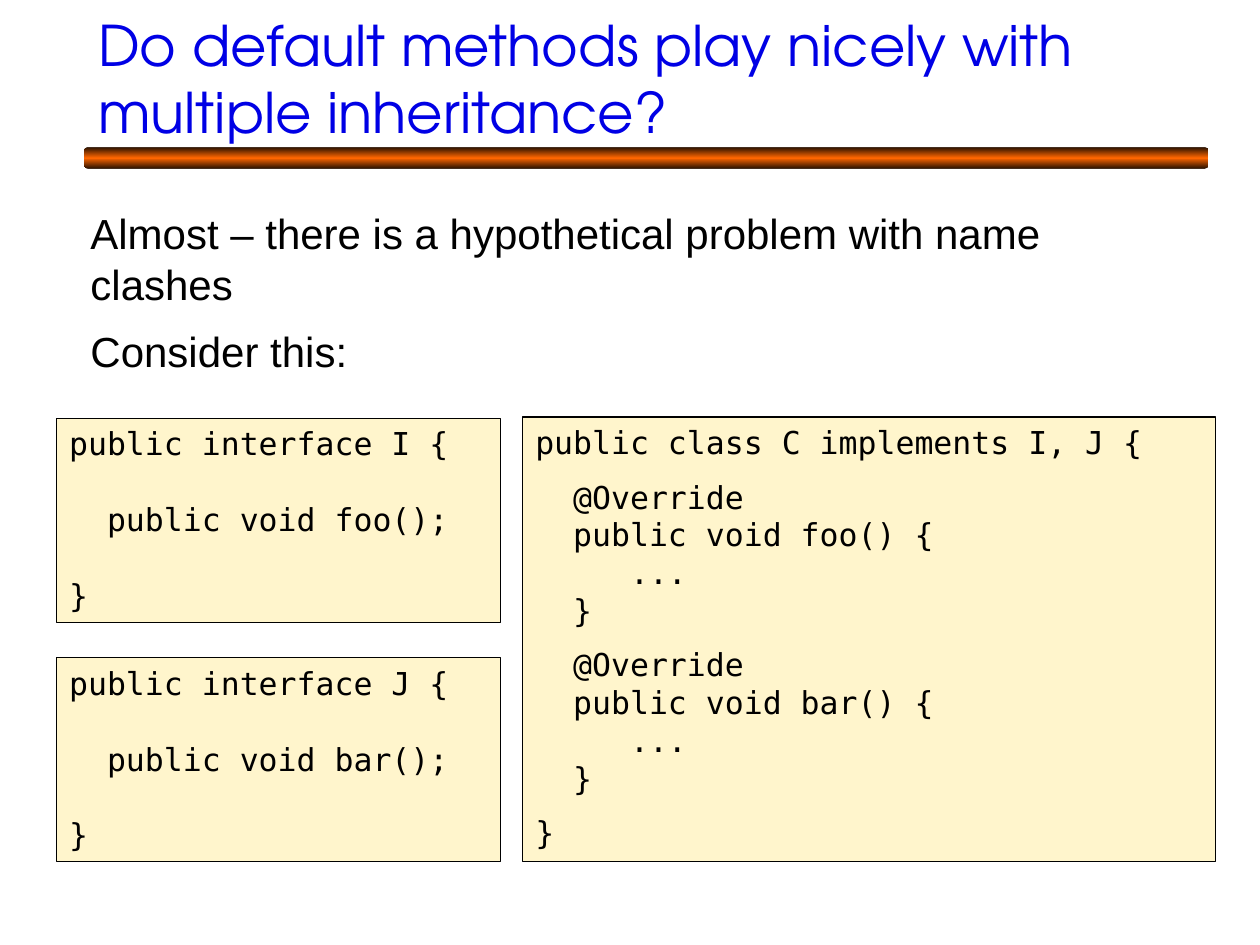
from pptx import Presentation
from pptx.dml.color import RGBColor
from pptx.enum.shapes import MSO_SHAPE
from pptx.enum.text import MSO_ANCHOR, PP_ALIGN
from pptx.util import Pt

COLORS = {"title": "0000E5", "text": "000000", "code_fill": "FFF5CC",
          "bar_edge": "2A1100", "bar_middle": "FF6600"}

TITLE = "Do default methods play nicely with multiple inheritance?"
BODY = ["Almost – there is a hypothetical problem with name clashes",
        "Consider this:"]

# Each code box holds groups of lines, set apart by a gap.
INTERFACE_I = [["public interface I {"], ["  public void foo();"], ["}"]]
INTERFACE_J = [["public interface J {"], ["  public void bar();"], ["}"]]
CLASS_C = [
    ["public class C implements I, J {"],
    ["  @Override", "  public void foo() {", "     ...", "  }"],
    ["  @Override", "  public void bar() {", "     ...", "  }"],
    ["}"],
]

TITLE_FORMAT = {"name": "TeX Gyre Adventor", "size": Pt(32)}
BODY_FORMAT = {"name": "Arial", "size": Pt(24)}
CODE_FORMAT = {"name": "DejaVu Sans Mono", "size": Pt(18)}
BODY_PITCH, BODY_GAP = 29.1, 9.2
CODE_PITCH, WIDE_GAP, NARROW_GAP = 21.6, 21.6, 9.5

LEFT, BOTTOM = 32.4, 492.5
INTERFACE_WIDTH, INTERFACE_HEIGHT = 253.5, 116.6
CLASS_LEFT, CLASS_TOP, CLASS_WIDTH = 298.8, 238.3, 396
CODE_BOXES = [  # groups, gap, left, top, width, height
    (INTERFACE_I, WIDE_GAP, LEFT, 239, INTERFACE_WIDTH, INTERFACE_HEIGHT),
    (INTERFACE_J, WIDE_GAP, LEFT, BOTTOM - INTERFACE_HEIGHT,
     INTERFACE_WIDTH, INTERFACE_HEIGHT),
    (CLASS_C, NARROW_GAP, CLASS_LEFT, CLASS_TOP, CLASS_WIDTH,
     BOTTOM - CLASS_TOP),
]


def color(name):
    return RGBColor.from_string(COLORS[name])


def write_groups(shape, groups, gap, font_format, color_name, pitch=None,
                 anchor=MSO_ANCHOR.TOP):
    """Write one paragraph a line, with the gap before each later group."""
    frame = shape.text_frame
    frame.word_wrap = True
    frame.vertical_anchor = anchor
    paragraph = frame.paragraphs[0]
    for group_index, group in enumerate(groups):
        for line_index, line in enumerate(group):
            if group_index or line_index:
                paragraph = frame.add_paragraph()
            if group_index and not line_index:
                paragraph.space_before = Pt(gap)
            if pitch:
                paragraph.line_spacing = Pt(pitch)
            paragraph.alignment = PP_ALIGN.LEFT
            run = paragraph.add_run()
            run.text = line
            for attribute, value in font_format.items():
                setattr(run.font, attribute, value)
            run.font.color.rgb = color(color_name)


def add_bar(slide):
    bar = slide.shapes.add_shape(MSO_SHAPE.ROUNDED_RECTANGLE,
                                 Pt(48.2), Pt(84.2), Pt(642.2), Pt(12.2))
    bar.shadow.inherit = False
    bar.adjustments[0] = 0.17
    bar.line.fill.background()
    bar.fill.gradient()
    bar.fill.gradient_angle = 90
    stops = bar.fill.gradient_stops
    # The default gradient has two stops; the middle one is a third.
    gradient_list = bar.fill._fill._gradFill.gsLst
    gradient_list.append(gradient_list.add_gs() if hasattr(
        gradient_list, "add_gs") else copy_stop(gradient_list))
    stops = bar.fill.gradient_stops
    for stop, position, name in zip(stops, (0, 0.5, 1),
                                    ("bar_edge", "bar_middle", "bar_edge")):
        stop.position = position
        stop.color.rgb = color(name)


def copy_stop(gradient_list):
    from copy import deepcopy
    return deepcopy(gradient_list[0])


def add_code_box(slide, groups, gap, *place):
    box = slide.shapes.add_shape(MSO_SHAPE.RECTANGLE, *map(Pt, place))
    box.shadow.inherit = False
    box.fill.solid()
    box.fill.fore_color.rgb = color("code_fill")
    box.line.color.rgb = color("text")
    box.line.width = Pt(0.75)
    write_groups(box, groups, gap, CODE_FORMAT, "text", CODE_PITCH)


def main():
    presentation = Presentation()
    presentation.slide_width, presentation.slide_height = Pt(720), Pt(540)
    slide = presentation.slides.add_slide(presentation.slide_layouts[6])
    add_bar(slide)

    title = slide.shapes.add_textbox(Pt(49), Pt(8.6), Pt(642.2), Pt(72))
    write_groups(title, [[TITLE]], 0, TITLE_FORMAT, "title",
                 anchor=MSO_ANCHOR.MIDDLE)
    body = slide.shapes.add_textbox(Pt(44.6), Pt(114.5), Pt(586), Pt(104.4))
    write_groups(body, [[line] for line in BODY], BODY_GAP, BODY_FORMAT,
                 "text", BODY_PITCH)

    for code_box in CODE_BOXES:
        add_code_box(slide, *code_box)
    presentation.save("out.pptx")


if __name__ == "__main__":
    main()
